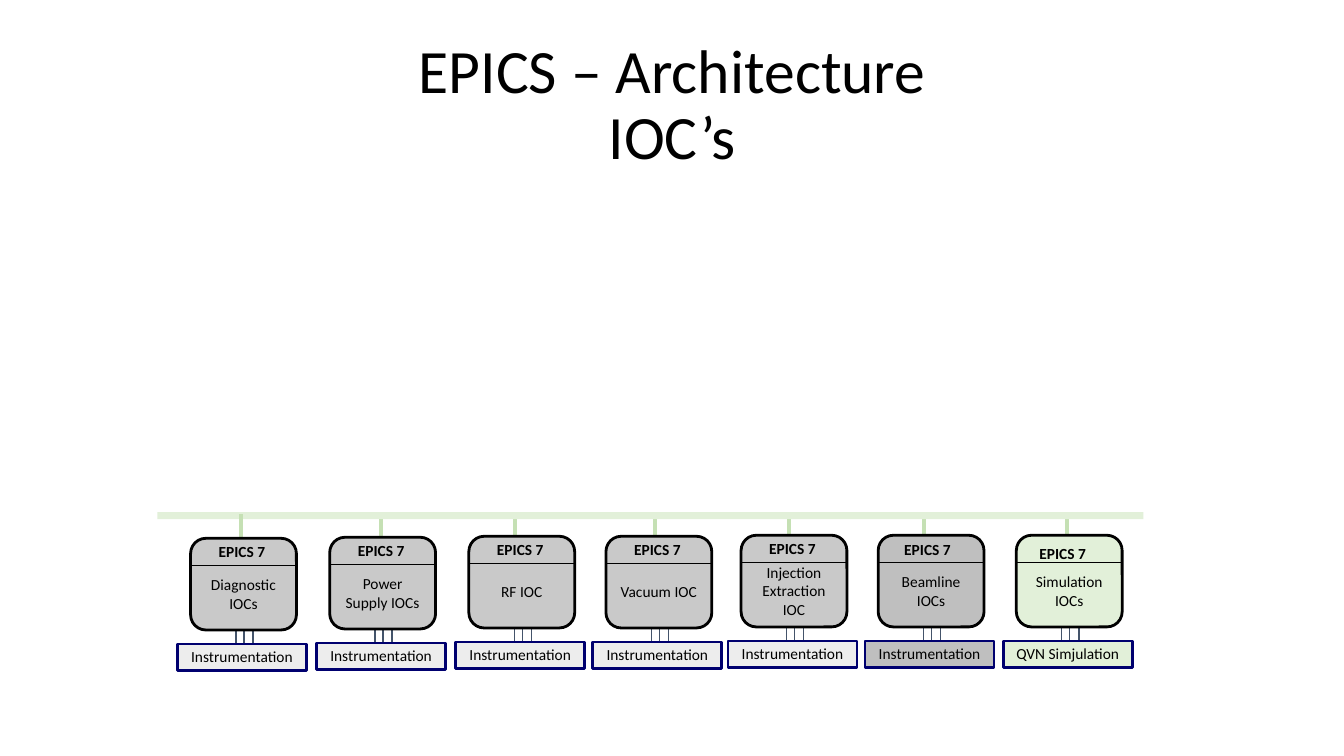
from dataclasses import dataclass

import lxml.etree
import pptx
import pptx.dml.color
import pptx.enum.shapes
import pptx.enum.text
import pptx.oxml.ns
import pptx.shapes.autoshape
import pptx.shapes.connector
import pptx.shapes.shapetree
import pptx.util

EMU_PER_PX = 9144  # 100 px to the inch
FONT = "Calibri"
COLORS = {
    "text": "000000",
    "outline": "000000",
    "bus": "E2F0D9",
    "drop": "C5E0B4",
    "wire": "44546A",
    "frame": "00006F",
    "gray": "C9C9C9",
    "pale": "EDEDED",
    "beamline": "BFBFBF",
    "simulation": "E2F0D9",
}
SHAPE = pptx.enum.shapes.MSO_SHAPE
ANCHOR = pptx.enum.text.MSO_ANCHOR
Shapes = pptx.shapes.shapetree.SlideShapes | pptx.shapes.shapetree.GroupShapes
Box = tuple[int, int, int, int]

IOC_WIDTH, IOC_HEIGHT = 105, 91
DIVIDER_DROP = 27
WIRE_OFFSETS = (45, 53, 62)
WIRE_TOP, DEVICE_TOP = 86, 105
DEVICE_INDENT, DEVICE_WIDTH, DEVICE_HEIGHT = -13, 128, 26
BUS_LEFT, BUS_TOP, BUS_WIDTH, BUS_HEIGHT = 156, 508, 978, 7
DROP_LENGTH = 30


@dataclass(frozen=True)
class Station:
    """An IOC with its header, its device and its drop from the bus."""
    role: str
    left: int
    top: int
    drop_x: int
    drop_top: int = BUS_TOP
    device: str = "Instrumentation"
    ioc_fill: str = "gray"
    device_fill: str = "pale"
    header_dx: int = -3
    header_dy: int = -1


STATIONS = [
    Station("Diagnostic IOCs", 189, 534, 239, drop_top=510),
    Station("Power Supply IOCs", 327, 533, 378),
    Station("RF IOC", 465, 532, 511),
    Station("Vacuum IOC", 601, 532, 650),
    Station("Injection Extraction IOC", 735, 531, 783),
    Station("Beamline IOCs", 871, 531, 916, ioc_fill="beamline",
            device_fill="beamline", header_dx=-5, header_dy=0),
    Station("Simulation IOCs", 1008, 531, 1058, device="QVN Simjulation",
            ioc_fill="simulation", device_fill="simulation",
            header_dx=-8, header_dy=4),
]


def px(length: int) -> pptx.util.Emu:
    return pptx.util.Emu(length * EMU_PER_PX)


def rgb(color: str) -> pptx.dml.color.RGBColor:
    return pptx.dml.color.RGBColor.from_string(COLORS[color])


def write(shape: pptx.shapes.autoshape.Shape, text: str, *, size: int = 11,
          bold: bool = False, anchor: ANCHOR = ANCHOR.MIDDLE,
          spacing: float = 1.0, insets: Box = (10, 5, 10, 5)) -> None:
    """Write one centred paragraph; insets run left, top, right, bottom."""
    frame = shape.text_frame
    frame.word_wrap = True
    frame.vertical_anchor = anchor
    (frame.margin_left, frame.margin_top,
     frame.margin_right, frame.margin_bottom) = map(px, insets)
    paragraph = frame.paragraphs[0]
    paragraph.alignment = pptx.enum.text.PP_ALIGN.CENTER
    paragraph.line_spacing = spacing
    for index, line in enumerate(text.splitlines()):
        if index:
            paragraph.add_line_break()
        run = paragraph.add_run()
        run.text = line
        run.font.name = FONT
        run.font.size = pptx.util.Pt(size)
        run.font.bold = bold
        run.font.color.rgb = rgb("text")


def add_box(shapes: Shapes, box: Box, fill: str, outline: str | None = None,
            kind: SHAPE = SHAPE.RECTANGLE) -> pptx.shapes.autoshape.Shape:
    shape = shapes.add_shape(kind, *map(px, box))
    shape.shadow.inherit = False
    shape.fill.solid()
    shape.fill.fore_color.rgb = rgb(fill)
    if outline is None:
        shape.line.fill.background()
    else:
        shape.line.color.rgb = rgb(outline)
        shape.line.width = pptx.util.Pt(2)
    return shape


def add_line(shapes: Shapes, ends: Box, color: str,
             width: float = 1) -> pptx.shapes.connector.Connector:
    line = shapes.add_connector(
        pptx.enum.shapes.MSO_CONNECTOR.STRAIGHT, *map(px, ends))
    line.line.color.rgb = rgb(color)
    line.line.width = pptx.util.Pt(width)
    lxml.etree.SubElement(line._element.spPr, pptx.oxml.ns.qn("a:effectLst"))
    return line


def add_drop(shapes: Shapes, station: Station) -> None:
    x, top = station.drop_x, station.drop_top
    add_line(shapes, (x, top, x, top + DROP_LENGTH), "drop", 2.89)


def add_station(shapes: Shapes, station: Station) -> None:
    members = shapes.add_group_shape().shapes
    left, top = station.left, station.top

    for offset in WIRE_OFFSETS:
        x = left + offset
        add_line(members, (x, top + WIRE_TOP, x, top + DEVICE_TOP), "wire")

    ioc = add_box(members, (left, top, IOC_WIDTH, IOC_HEIGHT),
                  station.ioc_fill, "outline", SHAPE.ROUNDED_RECTANGLE)
    write(ioc, station.role, insets=(10, 24, 10, 5))

    header = members.add_textbox(*map(px, (
        left + station.header_dx, top + station.header_dy, 108, 29)))
    write(header, "EPICS 7", bold=True, anchor=ANCHOR.TOP)

    divider_y = top + DIVIDER_DROP
    add_line(members, (left, divider_y, left + IOC_WIDTH, divider_y), "outline")

    device = add_box(members, (left + DEVICE_INDENT, top + DEVICE_TOP,
                               DEVICE_WIDTH, DEVICE_HEIGHT),
                     station.device_fill, "frame")
    write(device, station.device, spacing=0.9)


def main() -> None:
    deck = pptx.Presentation()
    deck.slide_width, deck.slide_height = px(1333), px(750)
    shapes = deck.slides.add_slide(deck.slide_layouts[6]).shapes

    title = shapes.add_textbox(*map(px, (167, 24, 1000, 163)))
    write(title, "EPICS – Architecture\nIOC’s", size=44, spacing=0.9,
          insets=(0, 0, 0, 0))

    first, *others = STATIONS
    for station in others:
        add_drop(shapes, station)
    add_box(shapes, (BUS_LEFT, BUS_TOP, BUS_WIDTH, BUS_HEIGHT), "bus")
    add_drop(shapes, first)

    for station in STATIONS:
        add_station(shapes, station)

    deck.save("out.pptx")


if __name__ == "__main__":
    main()
